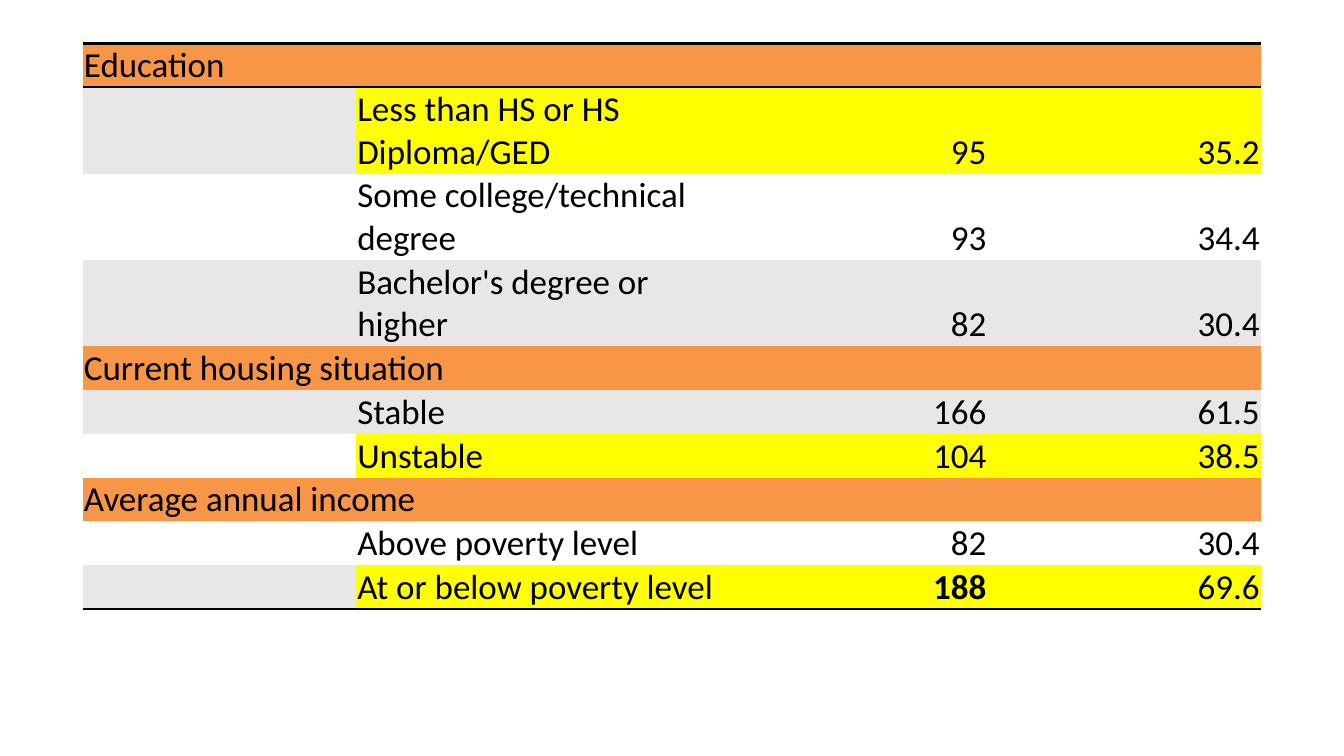
import pptx
import pptx.util
import pptx.dml.color
import pptx.enum.text
import pptx.oxml
import pptx.oxml.ns

Pt = pptx.util.Pt
ALIGN = pptx.enum.text.PP_ALIGN

THEME = {
    "font": "Calibri", "size": 25, "text": "000000", "rule": "000000", "rule_width": 2,
    "section": "F79646", "highlight": "FFFF00", "gray": "E7E7E7", "white": "FFFFFF",
}
NO_STYLE = "{2D5ABB26-0587-4C30-8999-92F81FD0307C}"
COLUMN_WIDTHS = [195.25, 225.25, 30.25, 195.25, 195.25]
ROW_HEIGHT = 29.5

# Each row: texts, fill of the first cell, fill of the others, columns to merge
ROWS = [
    (["Education", "", "", "", ""], "section", "section", (1, 2)),
    (["", "Less than HS or HS Diploma/GED", "", "95", "35.2"], "gray", "highlight", (1, 2)),
    (["", "Some college/technical degree", "", "93", "34.4"], "white", "white", (1, 2)),
    (["", "Bachelor's degree or higher", "", "82", "30.4"], "gray", "gray", (1, 2)),
    (["Current housing situation", "", "", "", ""], "section", "section", (0, 2)),
    (["", "Stable", "", "166", "61.5"], "gray", "gray", None),
    (["", "Unstable", "", "104", "38.5"], "white", "highlight", (1, 2)),
    (["Average annual income", "", "", "", ""], "section", "section", (0, 2)),
    (["", "Above poverty level", "", "82", "30.4"], "white", "white", (1, 2)),
    (["", "At or below poverty level", "", "188", "69.6"], "gray", "highlight", (1, 2)),
]
RULES = {0: ["lnB", "lnT"], len(ROWS) - 1: ["lnB"]}
BOLD_TEXTS = {"188"}
CELL_FORMAT = {
    "margin_left": Pt(0.75), "margin_right": Pt(0.75), "margin_top": Pt(0.75),
    "margin_bottom": Pt(0), "vertical_anchor": pptx.enum.text.MSO_ANCHOR.BOTTOM,
}


def add_rule(cell, side):
    """Draw a border line on one side of a cell."""
    line = pptx.oxml.parse_xml(
        f'<a:{side} {pptx.oxml.ns.nsdecls("a")} w="{Pt(THEME["rule_width"])}">'
        f'<a:solidFill><a:srgbClr val="{THEME["rule"]}"/></a:solidFill></a:{side}>')
    cell._tc.get_or_add_tcPr().insert(0, line)


# Slide
presentation = pptx.Presentation()
presentation.slide_width, presentation.slide_height = Pt(960), Pt(540)
slide = presentation.slides.add_slide(presentation.slide_layouts[6])

# Table without a banded style
shape = slide.shapes.add_table(
    len(ROWS), len(COLUMN_WIDTHS), Pt(59.25), Pt(31),
    Pt(sum(COLUMN_WIDTHS)), Pt(ROW_HEIGHT * len(ROWS)))
table = shape.table
table.first_row = table.horz_banding = False
table._tbl.tblPr.find(pptx.oxml.ns.qn("a:tableStyleId")).text = NO_STYLE
for column, width in zip(table.columns, COLUMN_WIDTHS):
    column.width = Pt(width)

# Cells
for row_index, (texts, first_fill, other_fill, merged) in enumerate(ROWS):
    table.rows[row_index].height = Pt(ROW_HEIGHT)
    for column_index, text in enumerate(texts):
        cell = table.cell(row_index, column_index)
        for name, value in CELL_FORMAT.items():
            setattr(cell, name, value)
        cell.fill.solid()
        fill = other_fill if column_index else first_fill
        cell.fill.fore_color.rgb = pptx.dml.color.RGBColor.from_string(THEME[fill])
        for side in RULES.get(row_index, []):
            add_rule(cell, side)
        if text:
            paragraph = cell.text_frame.paragraphs[0]
            paragraph.alignment = ALIGN.RIGHT if column_index > 2 else ALIGN.LEFT
            run = paragraph.add_run()
            run.text = text
            font_format = {"name": THEME["font"], "size": Pt(THEME["size"]),
                           "bold": text in BOLD_TEXTS}
            for name, value in font_format.items():
                setattr(run.font, name, value)
            run.font.color.rgb = pptx.dml.color.RGBColor.from_string(THEME["text"])
    if merged:
        first, last = merged
        table.cell(row_index, first).merge(table.cell(row_index, last))

presentation.save("out.pptx")
